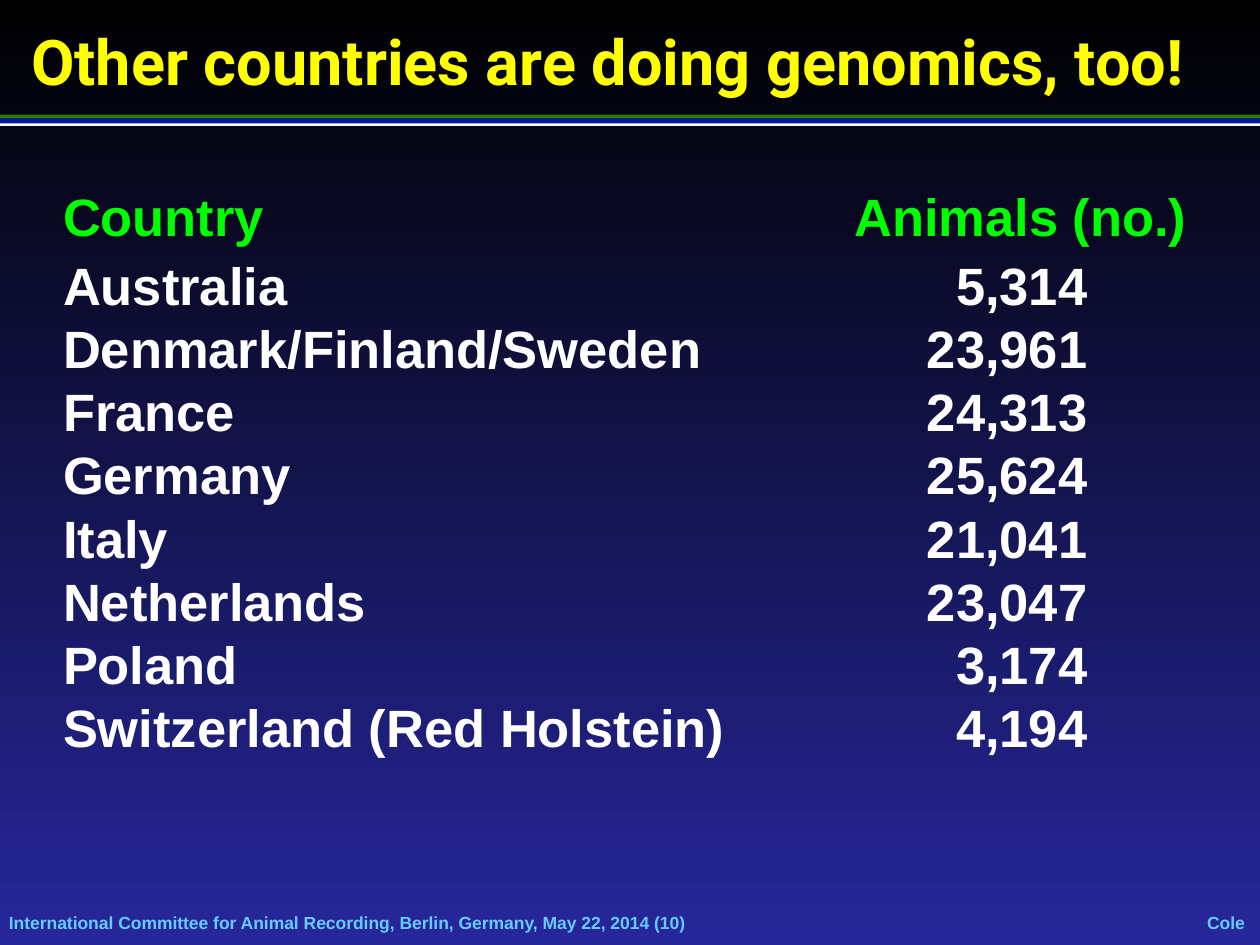
from pptx import Presentation, util as u
from pptx.dml.color import RGBColor
from pptx.enum import shapes, text

TITLE = "Other countries are doing genomics, too!"
HEADER = ("Country", "Animals (no.)")
ANIMALS = [
    ("Australia", "5,314"),
    ("Denmark/Finland/Sweden", "23,961"),
    ("France", "24,313"),
    ("Germany", "25,624"),
    ("Italy", "21,041"),
    ("Netherlands", "23,047"),
    ("Poland", "3,174"),
    ("Switzerland (Red Holstein)", "4,194"),
]
VENUE = "International Committee for Animal Recording, Berlin, Germany, May 22, 2014 (10)"
AUTHOR = "Cole"

THEME = {
    "bg": ("000000", "27279B"),
    "title": ("Roboto", 36, "FFFF00"),
    "header": ("Arial", 30, "00FF00"),
    "body": ("Arial", 30, "FFFFFF"),
    "footer": ("Arial", 10, "66CCFF"),
}
# top, height, colour, from back to front
RULES = [(0.91, 0.03, "2A7E00"), (0.97, 0.03, "FFFFFF"), (0.94, 0.04, "001799")]

W, H = 10, 7.5
MARGIN = W / 20
COLUMNS = (6.28, 2.72)
HEADER_H, ROW_H = 0.51, 0.46
NUMBER_EDGE = 1.85  # right edge of the figures, from the left of their column
NO_STYLE = "{2D5ABB26-0587-4C30-8999-92F81FD0307C}"

LEFT, CENTER, RIGHT = text.PP_ALIGN.LEFT, text.PP_ALIGN.CENTER, text.PP_ALIGN.RIGHT


def set_margins(target, left=0, top=0, right=0, bottom=0):
    target.margin_left, target.margin_top = u.Inches(left), u.Inches(top)
    target.margin_right, target.margin_bottom = u.Inches(right), u.Inches(bottom)


def write(tf, words, style, align=LEFT):
    p = tf.paragraphs[0]
    p.alignment = align
    r = p.add_run()
    r.text = words
    name, size, color = THEME[style]
    r.font.name, r.font.size, r.font.bold = name, u.Pt(size), True
    r.font.color.rgb = RGBColor.from_string(color)


def add_text(s, box, words, style, align=LEFT, inset=(0, 0), wrap=True):
    tf = s.shapes.add_textbox(*map(u.Inches, box)).text_frame
    tf.word_wrap = wrap
    tf.vertical_anchor = text.MSO_ANCHOR.MIDDLE
    set_margins(tf, *inset, *inset)
    write(tf, words, style, align)


def add_background(s):
    fill = s.background.fill
    fill.gradient()
    fill.gradient_angle = 270
    for stop, color, position in zip(fill.gradient_stops, THEME["bg"], (0, 1)):
        stop.color.rgb = RGBColor.from_string(color)
        stop.position = position


def add_rules(s):
    for top, height, color in RULES:
        sp = s.shapes.add_shape(shapes.MSO_SHAPE.RECTANGLE, 0, u.Inches(top),
                                u.Inches(W), u.Inches(height))
        sp.shadow.inherit = False
        sp.fill.solid()
        sp.fill.fore_color.rgb = RGBColor.from_string(color)
        sp.line.fill.background()


def add_animals(s):
    rows = [HEADER] + ANIMALS
    heights = [HEADER_H] + [ROW_H] * len(ANIMALS)
    frame = s.shapes.add_table(len(rows), len(COLUMNS), u.Inches(MARGIN), u.Inches(H / 5),
                               u.Inches(sum(COLUMNS)), u.Inches(sum(heights)))
    table = frame.table
    table.first_row = table.horz_banding = False
    table._tbl.tblPr[0].text = NO_STYLE
    for column, width in zip(table.columns, COLUMNS):
        column.width = u.Inches(width)
    for i, (row, height) in enumerate(zip(rows, heights)):
        table.rows[i].height = u.Inches(height)
        for j, words in enumerate(row):
            cell = table.cell(i, j)
            cell.fill.background()
            is_header, is_number = i == 0, i > 0 and j == 1
            set_margins(cell, right=COLUMNS[1] - NUMBER_EDGE if is_number else 0,
                        bottom=0.05 if is_header else 0)
            write(cell.text_frame, words, "header" if is_header else "body",
                  RIGHT if is_number else LEFT)
            if is_header:
                cell.text_frame.paragraphs[0].space_after = u.Pt(6)


def main():
    prs = Presentation()
    prs.slide_width, prs.slide_height = u.Inches(W), u.Inches(H)
    s = prs.slides.add_slide(prs.slide_layouts[6])
    add_background(s)
    add_text(s, (0.07, 7.24, 8.09, 0.17), VENUE, "footer")
    add_text(s, (9.58, 7.24, 0.3, 0.17), AUTHOR, "footer", CENTER, wrap=False)
    add_rules(s)
    add_text(s, (0.15, 0.13, 9.83, 0.7), TITLE, "title", inset=(0.1, 0.05))
    add_animals(s)
    prs.save("out.pptx")


if __name__ == "__main__":
    main()
